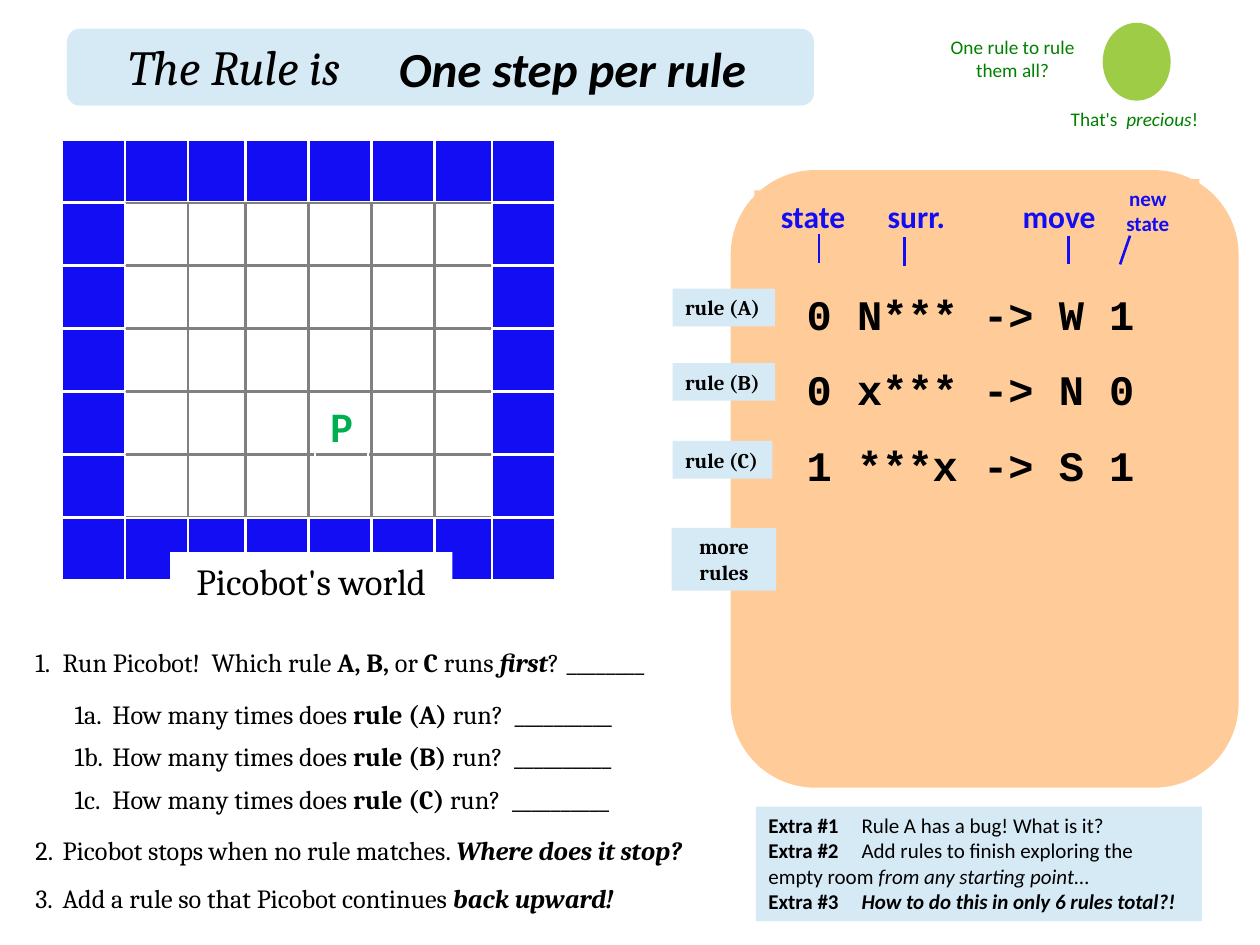
from lxml.etree import SubElement
from pptx import Presentation
from pptx.dml.color import RGBColor
from pptx.enum.shapes import MSO_CONNECTOR, MSO_SHAPE as Shape
from pptx.enum.text import MSO_ANCHOR as Anchor, MSO_AUTO_SIZE, PP_ALIGN as Align
from pptx.oxml.ns import qn
from pptx.util import Cm, Pt

BLUE, PALE, PEACH, GREEN = "120DF3", "D6EAF6", "FFCC99", "008000"
BLACK, WHITE, GREY = "000000", "FFFFFF", "808080"
COLUMN_WIDTHS = [1.27, 1.27, 1.16, 1.27, 1.27, 1.27, 1.16, 1.27]
ROWS, CELL_HEIGHT = 7, 1.27
WORLD_LEFT, WORLD_TOP = 1.25, 2.82


def rgb(hex_color):
    return RGBColor.from_string(hex_color)


def place(shape, left, top, width, height):
    shape.left, shape.top = Cm(left), Cm(top)
    shape.width, shape.height = Cm(width), Cm(height)


def write(frame, paragraphs, size, font, color=BLACK, align=Align.LEFT, wrap=True):
    """Fill a frame; each paragraph is a list of (text, style), style from "b" and "i"."""
    frame.auto_size = MSO_AUTO_SIZE.NONE
    frame.word_wrap = wrap
    frame.vertical_anchor = Anchor.TOP
    for index, pieces in enumerate(paragraphs):
        paragraph = frame.paragraphs[0] if index == 0 else frame.add_paragraph()
        paragraph.alignment = align
        for text, style in pieces:
            run = paragraph.add_run()
            run.text = text
            run.font.size, run.font.name = Pt(size), font
            run.font.bold, run.font.italic = "b" in style, "i" in style
            run.font.color.rgb = rgb(color)


def add_block(slide, box, fill=None, line=None, weight=1.5, kind=Shape.RECTANGLE):
    block = slide.shapes.add_shape(kind, *map(Cm, box))
    block.shadow.inherit = False
    if fill:
        block.fill.solid()
        block.fill.fore_color.rgb = rgb(fill)
    else:
        block.fill.background()
    if line:
        block.line.color.rgb = rgb(line)
        block.line.width = Pt(weight)
    else:
        block.line.fill.background()
    return block


def add_note(slide, box, paragraphs, size, font, **style):
    note = slide.shapes.add_textbox(*map(Cm, box))
    write(note.text_frame, paragraphs, size, font, **style)
    return note


def add_pointer(slide, start_x, start_y, end_x, end_y):
    pointer = slide.shapes.add_connector(
        MSO_CONNECTOR.STRAIGHT, Cm(start_x), Cm(start_y), Cm(end_x), Cm(end_y))
    pointer.line.color.rgb = rgb(BLUE)
    pointer.line.width = Pt(1.5)
    SubElement(pointer.element.spPr, qn("a:effectLst"))


def set_tab(paragraph, position):
    tabs = SubElement(paragraph._p.get_or_add_pPr(), qn("a:tabLst"))
    SubElement(tabs, qn("a:tab"), pos=str(Cm(position)), algn="l")


def set_hanging(paragraph, left, hang):
    properties = paragraph._p.get_or_add_pPr()
    properties.set("marL", str(Cm(left)))
    properties.set("indent", str(-Cm(hang)))
    SubElement(properties, qn("a:buNone"))


def add_heading(slide):
    banner = add_block(slide, (1.35, 0.58, 15.06, 1.55), PALE, kind=Shape.ROUNDED_RECTANGLE)
    slide.shapes.element.insert(2, banner.element)  # behind the title
    title = slide.shapes.title
    place(title, 7.11, 0.64, 8.86, 1.45)
    write(title.text_frame, [[("One step per rule", "bi")]], 28, "Calibri", align=Align.CENTER)
    add_note(slide, (2.34, 0.61, 5.21, 1.45), [[("The Rule is", "i")]], 28, "Cambria", wrap=False)


def add_world(slide):
    last_column = len(COLUMN_WIDTHS) - 1
    for row in range(ROWS):
        def is_wall(column):
            return row in (0, ROWS - 1) or column in (0, last_column)

        # Walls come last so that their white edges cover the floor's grey ones
        for column in sorted(range(last_column + 1), key=is_wall):
            box = (WORLD_LEFT + sum(COLUMN_WIDTHS[:column]), WORLD_TOP + row * CELL_HEIGHT,
                   COLUMN_WIDTHS[column], CELL_HEIGHT)
            colors = (BLUE, WHITE) if is_wall(column) else (WHITE, GREY)
            add_block(slide, box, *colors)
    caption = add_block(slide, (3.43, 11.13, 5.69, 1.14), WHITE)
    write(caption.text_frame, [[("Picobot's world", "")]], 21, "Cambria",
          align=Align.CENTER, wrap=False)
    picobot = add_block(slide, (6.35, 7.95, 1.07, 1.27), None, WHITE, 0.75)
    write(picobot.text_frame, [[("P", "b")]], 24, "Calibri", "00B050", Align.CENTER)


def add_rules(slide):
    add_block(slide, (14.73, 3.43, 10.24, 12.45), PEACH, kind=Shape.ROUNDED_RECTANGLE)
    headers = [("state", 18, (15.21, 3.84, 2.36, 1.02)),
               ("surr.", 18, (17.32, 3.84, 2.31, 1.02)),
               ("move", 18, (20.12, 3.84, 2.46, 1.02)),
               ("new state", 12, (22.1, 3.61, 2.08, 1.27))]
    for text, size, box in headers:
        header = add_block(slide, box, PEACH)
        write(header.text_frame, [[(text, "b")]], size, "Calibri", BLUE, Align.CENTER)
    for start_x, start_y, end_x in [(16.51, 4.72, 16.51), (18.24, 4.78, 18.24),
                                    (21.54, 4.75, 21.54), (22.78, 4.75, 22.58)]:
        add_pointer(slide, start_x, start_y, end_x, start_y + 0.58)

    rules = ["0 N*** -> W 1", "0 x*** -> N 0", "1 ***x -> S 1"]
    code = add_note(slide, (15.54, 5.18, 8.05, 6.4), [[(rule, "b")] for rule in rules],
                    24, "Courier New", align=Align.CENTER)
    for paragraph in code.text_frame.paragraphs:
        paragraph.line_spacing = 1.5

    for letter, top, width in [("A", 5.82, 2.06), ("B", 7.32, 2.06), ("C", 8.89, 2.01)]:
        tag = add_block(slide, (13.56, top, width, 0.76), PALE)
        write(tag.text_frame, [[(f"rule ({letter})", "b")]], 12, "Cambria", wrap=False)
    more = add_block(slide, (13.54, 10.64, 2.11, 1.27), PALE)
    write(more.text_frame, [[("more rules", "b")]], 12, "Cambria", align=Align.CENTER)


def add_questions(slide):
    counts = [[(f"1{letter.lower()}.\tHow many times does ", ""), (f"rule ({letter}) ", "b"),
               ("run?  __________", "")] for letter in "ABC"]
    questions = [
        [("1.\tRun Picobot!  Which rule ", ""), ("A, B, ", "b"), ("or ", ""), ("C", "b"),
         (" runs ", ""), ("first", "bi"), ("?\t________", "")],
        *counts,
        [("2.\tPicobot stops when no rule matches. ", ""), ("Where does it stop?", "bi")],
        [("3.\tAdd a rule so that Picobot continues ", ""), ("back upward!", "bi")],
    ]
    body = slide.placeholders[1]
    place(body, 0.46, 12.9, 15.1, 5.7)
    write(body.text_frame, questions, 15, "Cambria")
    gaps = [0, 11.5, 6.5, 6.5, 10.8, 9.4]
    for index, (paragraph, gap) in enumerate(zip(body.text_frame.paragraphs, gaps)):
        paragraph.line_spacing, paragraph.space_before = Pt(18), Pt(gap)
        is_count = 1 <= index <= len(counts)
        set_hanging(paragraph, *((1.55, 0.76) if is_count else (0.55, 0.55)))
    set_tab(body.text_frame.paragraphs[0], 10.87)


def add_extras(slide):
    extras = add_block(slide, (15.24, 16.26, 8.99, 2.31), PALE)
    write(extras.text_frame, [
        [("Extra #1", "b"), ("\tRule A has a bug! What is it?", "")],
        [("Extra #2", "b"), ("\tAdd rules to finish exploring the empty room ", ""),
         ("from any starting point", "i"), ("…", "")],
        [("Extra #3\t", "b"), ("How to do this in only 6 rules total?!", "bi")],
    ], 12, "Calibri")
    for paragraph in extras.text_frame.paragraphs:
        set_tab(paragraph, 1.88)


def add_mascot(slide):
    add_block(slide, (22.23, 0.46, 1.37, 1.57), "9ECC46", kind=Shape.OVAL)
    speech = {"size": 11, "font": "Calibri", "color": GREEN, "align": Align.CENTER}
    add_note(slide, (18.8, 0.58, 3.23, 1.19), [[("One rule to rule them all?", "")]], **speech)
    add_note(slide, (21.18, 2.03, 3.38, 0.74),
             [[("That's  ", ""), ("precious", "i"), ("!", "")]], **speech)


def main():
    presentation = Presentation()
    presentation.slide_width, presentation.slide_height = Cm(25.4), Cm(19.05)
    slide = presentation.slides.add_slide(presentation.slide_layouts[1])
    add_heading(slide)
    add_rules(slide)
    add_world(slide)
    add_questions(slide)
    add_extras(slide)
    add_mascot(slide)
    presentation.save("out.pptx")


if __name__ == "__main__":
    main()
